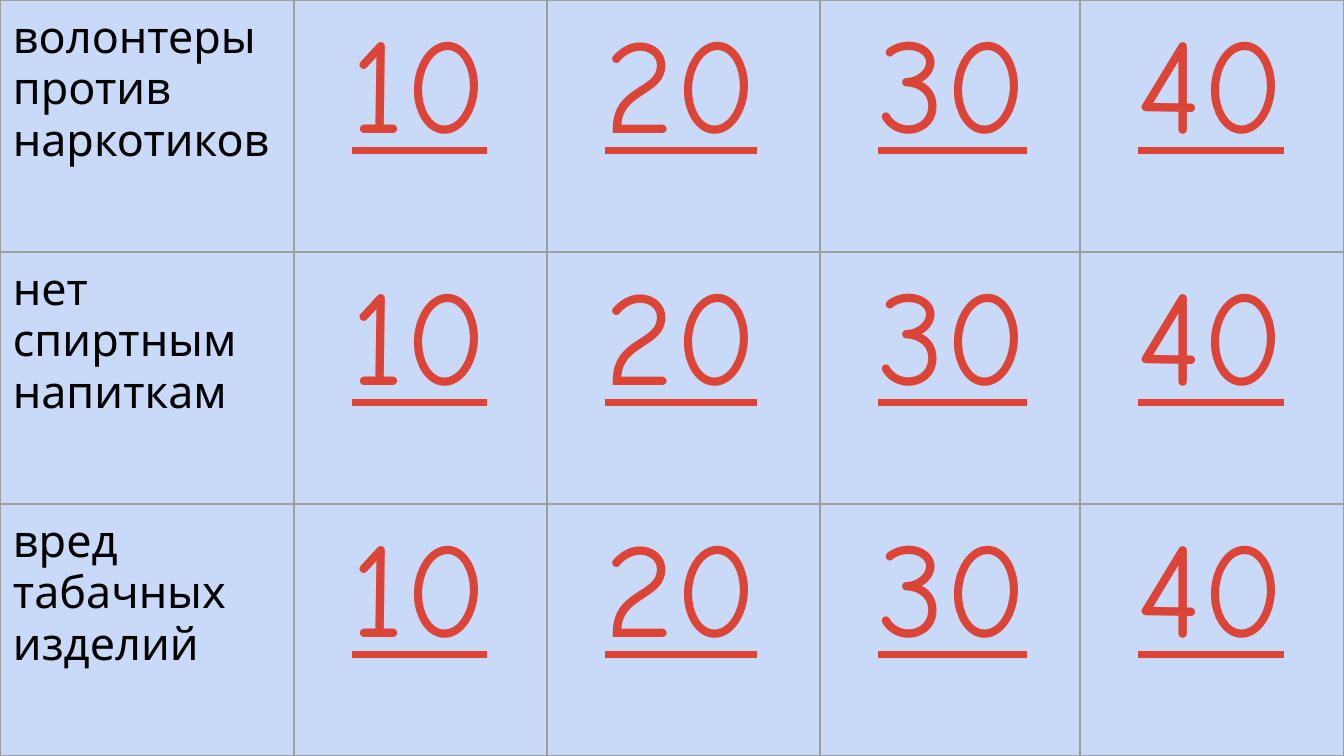
from lxml.etree import SubElement
from pptx import Presentation
from pptx.dml.color import RGBColor
from pptx.oxml.ns import qn
from pptx.util import Emu, Pt

SCALE = 9144000 / 1344  # EMU in one px
COLUMN_WIDTHS = [294, 253, 273, 260, 264]
ROW_HEIGHT = 252
INSET = 13
FONT = "Comic Neue"

SKY = RGBColor(0xC9, 0xDA, 0xF8)
BLACK = RGBColor(0, 0, 0)
RED = RGBColor(0xDB, 0x44, 0x37)
GREY = RGBColor(0x9E, 0x9E, 0x9E)

TOPICS = [
    "волонтеры против наркотиков",
    "нет спиртным напиткам",
    "вред табачных изделий",
]
POINTS = [10, 20, 30, 40]


def px(length):
    return Emu(round(length * SCALE))


def add_borders(cell):
    properties = cell._tc.get_or_add_tcPr()
    for side in ("lnL", "lnR", "lnT", "lnB"):
        line = SubElement(properties, qn(f"a:{side}"), w=str(Pt(0.75)))
        fill = SubElement(line, qn("a:solidFill"))
        SubElement(fill, qn("a:srgbClr"), val=str(GREY))


def format_cell(cell):
    add_borders(cell)
    cell.fill.background()
    cell.margin_left = cell.margin_right = px(INSET)
    cell.margin_top = cell.margin_bottom = px(INSET)


def add_span(para, text, color, underline=False):
    span = para.add_run()
    span.text = text
    span.font.color.rgb = color
    span.font.underline = underline


def write_topic(cell, topic):
    para = cell.text_frame.paragraphs[0]
    para.font.name, para.font.size = FONT, Pt(24)
    add_span(para, topic, BLACK)


def write_points(cell, points):
    para = cell.text_frame.paragraphs[0]
    para.font.name, para.font.size = FONT, Pt(72)
    add_span(para, " ", BLACK)
    add_span(para, str(points), RED, underline=True)


def add_board(page):
    width, height = sum(COLUMN_WIDTHS), ROW_HEIGHT * len(TOPICS)
    board = page.shapes.add_table(
        len(TOPICS), len(COLUMN_WIDTHS), 0, 0, px(width), px(height)
    ).table
    board.first_row = board.horz_banding = False
    for column, column_width in zip(board.columns, COLUMN_WIDTHS):
        column.width = px(column_width)

    # One row per topic, one column per question value
    for row, topic in zip(board.rows, TOPICS):
        row.height = px(ROW_HEIGHT)
        cells = list(row.cells)
        for cell in cells:
            format_cell(cell)
        write_topic(cells[0], topic)
        for cell, points in zip(cells[1:], POINTS):
            write_points(cell, points)


def main():
    deck = Presentation()
    deck.slide_width, deck.slide_height = px(1344), px(756)
    page = deck.slides.add_slide(deck.slide_layouts[6])

    # Background
    page.background.fill.solid()
    page.background.fill.fore_color.rgb = SKY

    # Quiz board
    add_board(page)
    deck.save("out.pptx")


if __name__ == "__main__":
    main()
